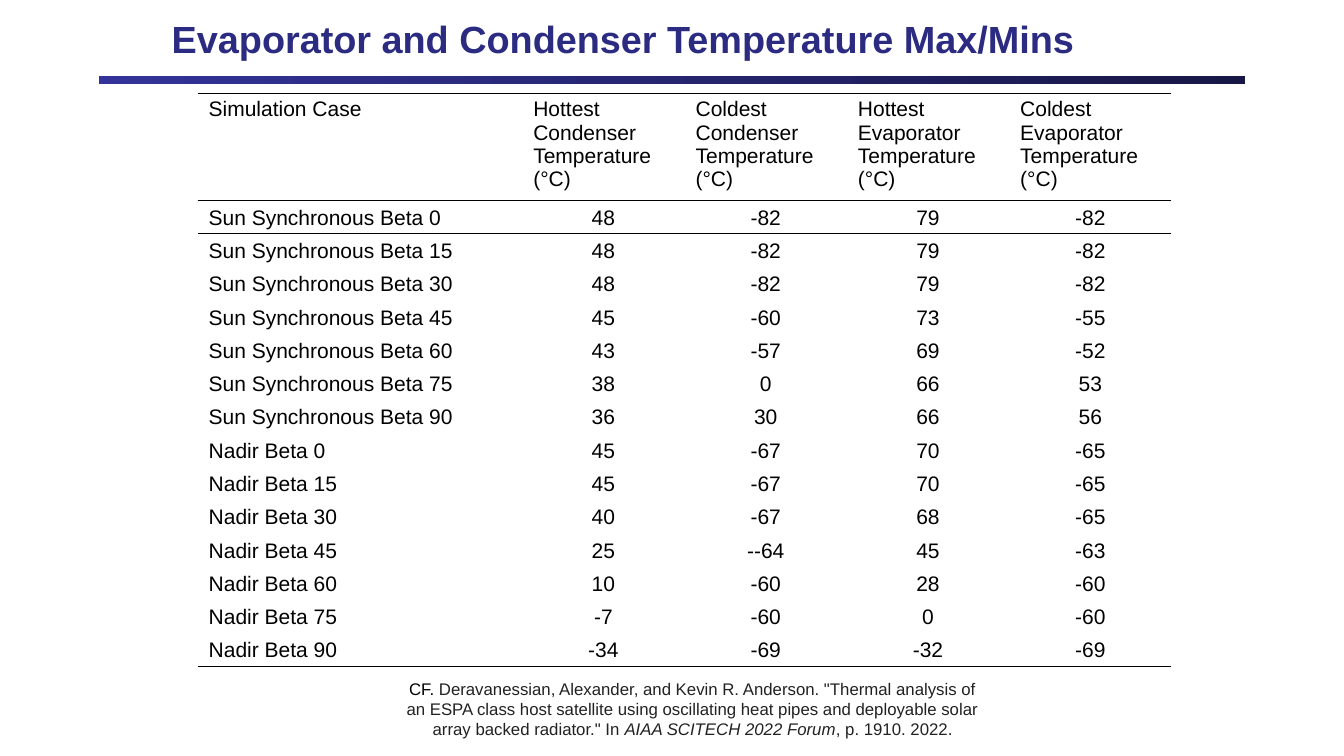
"""Build the slide of evaporator and condenser temperature extremes."""
from lxml.etree import SubElement
from pptx import Presentation
from pptx.dml.color import RGBColor
from pptx.enum.shapes import MSO_SHAPE
from pptx.enum.text import MSO_ANCHOR, MSO_AUTO_SIZE, PP_ALIGN
from pptx.oxml.ns import qn
from pptx.util import Inches, Pt

TITLE = "Evaporator and Condenser Temperature Max/Mins"
HEADERS = [
    ("Simulation Case",),
    ("Hottest Condenser", "Temperature (°C)"),
    ("Coldest Condenser", "Temperature (°C)"),
    ("Hottest Evaporator", "Temperature (°C)"),
    ("Coldest Evaporator", "Temperature (°C)"),
]
BETA_ANGLES = (0, 15, 30, 45, 60, 75, 90)
TEMPERATURES = {
    "Sun Synchronous": [
        ("48", "-82", "79", "-82"),
        ("48", "-82", "79", "-82"),
        ("48", "-82", "79", "-82"),
        ("45", "-60", "73", "-55"),
        ("43", "-57", "69", "-52"),
        ("38", "0", "66", "53"),
        ("36", "30", "66", "56"),
    ],
    "Nadir": [
        ("45", "-67", "70", "-65"),
        ("45", "-67", "70", "-65"),
        ("40", "-67", "68", "-65"),
        ("25", "--64", "45", "-63"),
        ("10", "-60", "28", "-60"),
        ("-7", "-60", "0", "-60"),
        ("-34", "-69", "-32", "-69"),
    ],
}
CITATION = [
    ("CF. ", "text", False),
    ('Deravanessian, Alexander, and Kevin R. Anderson. "Thermal analysis of an ESPA class host '
     'satellite using oscillating heat pipes and deployable solar array backed radiator." In ',
     "citation", False),
    ("AIAA SCITECH 2022 Forum", "citation", True),
    (", p. 1910. 2022.", "citation", False),
]
COLORS = {"title": "2B2B82", "bar_start": "333399", "bar_end": "171746",
          "text": "000000", "citation": "222222"}
FONT = "Arial"
PLAIN_TABLE_STYLE = "{2D5ABB26-0587-4C30-8999-92F81FD0307C}"
COLUMN_WIDTH, HEADER_HEIGHT, ROW_HEIGHT = 1.61, 1.06, 0.33


def box(*lengths):
    return [Inches(length) for length in lengths]


def add_run(paragraph, text, size, color="text", bold=False, italic=False):
    run = paragraph.add_run()
    run.text = text
    font = run.font
    font.name, font.size, font.bold, font.italic = FONT, Pt(size), bold, italic
    font.color.rgb = RGBColor.from_string(COLORS[color])


def add_rule(cell, side):
    line = SubElement(cell._tc.get_or_add_tcPr(), qn(f"a:{side}"), w=str(Pt(1)))
    fill = SubElement(line, qn("a:solidFill"))
    SubElement(fill, qn("a:srgbClr"), val=COLORS["text"])


def add_title(slide):
    title = slide.shapes.title
    title.left, title.top, title.width, title.height = box(0.64, 0.15, 11.08, 0.46)
    frame = title.text_frame
    frame.auto_size = MSO_AUTO_SIZE.NONE
    frame.vertical_anchor = MSO_ANCHOR.MIDDLE
    frame.margin_top = frame.margin_bottom = 0
    paragraph = frame.paragraphs[0]
    paragraph.alignment = PP_ALIGN.CENTER
    add_run(paragraph, TITLE, 27, "title", bold=True)


def add_bar(slide):
    bar = slide.shapes.add_shape(MSO_SHAPE.RECTANGLE, *box(0.98, 0.75, 11.37, 0.08))
    bar.shadow.inherit = False
    bar.line.fill.background()
    bar.fill.gradient()
    bar.fill.gradient_angle = 0
    for stop, position, name in zip(bar.fill.gradient_stops, (0, 1), ("bar_start", "bar_end")):
        stop.position = position
        stop.color.rgb = RGBColor.from_string(COLORS[name])


def add_temperature_table(slide):
    rows = [HEADERS] + [
        [(f"{orbit} Beta {angle}",)] + [(value,) for value in values]
        for orbit, cases in TEMPERATURES.items()
        for angle, values in zip(BETA_ANGLES, cases)
    ]
    last = len(rows) - 1
    width = COLUMN_WIDTH * (len(HEADERS) + 1)
    height = HEADER_HEIGHT + ROW_HEIGHT * last
    table = slide.shapes.add_table(
        len(rows), len(HEADERS), *box(1.96, 0.93, width, height)).table
    table.first_row = table.horz_banding = False
    table._tbl.tblPr.find(qn("a:tableStyleId")).text = PLAIN_TABLE_STYLE
    for index, column in enumerate(table.columns):
        column.width = Inches(COLUMN_WIDTH * (1 if index else 2))
    for index, row in enumerate(rows):
        table.rows[index].height = Inches(ROW_HEIGHT if index else HEADER_HEIGHT)
        for column, lines in enumerate(row):
            cell = table.cell(index, column)
            cell.margin_left = cell.margin_right = Inches(0.11)
            cell.margin_top = cell.margin_bottom = Inches(0.04)
            cell.vertical_anchor = MSO_ANCHOR.BOTTOM if index else MSO_ANCHOR.TOP
            if index <= 1:
                add_rule(cell, "lnT")
            if index in (0, last):
                add_rule(cell, "lnB")
            cell.fill.background()
            paragraph = cell.text_frame.paragraphs[0]
            paragraph.alignment = PP_ALIGN.CENTER if index and column else PP_ALIGN.JUSTIFY
            for number, line in enumerate(lines):
                if number:
                    paragraph.add_line_break()
                add_run(paragraph, line, 15)


def add_citation(slide):
    frame = slide.shapes.add_textbox(*box(3.91, 6.68, 5.92, 0.71)).text_frame
    frame.word_wrap = True
    frame.auto_size = MSO_AUTO_SIZE.SHAPE_TO_FIT_TEXT
    paragraph = frame.paragraphs[0]
    paragraph.alignment = PP_ALIGN.CENTER
    for text, color, italic in CITATION:
        add_run(paragraph, text, 12, color, italic=italic)


def main():
    presentation = Presentation()
    presentation.slide_width, presentation.slide_height = box(13.33, 7.5)
    slide = presentation.slides.add_slide(presentation.slide_layouts[5])
    add_bar(slide)
    add_title(slide)
    add_temperature_table(slide)
    add_citation(slide)
    presentation.save("out.pptx")


if __name__ == "__main__":
    main()
